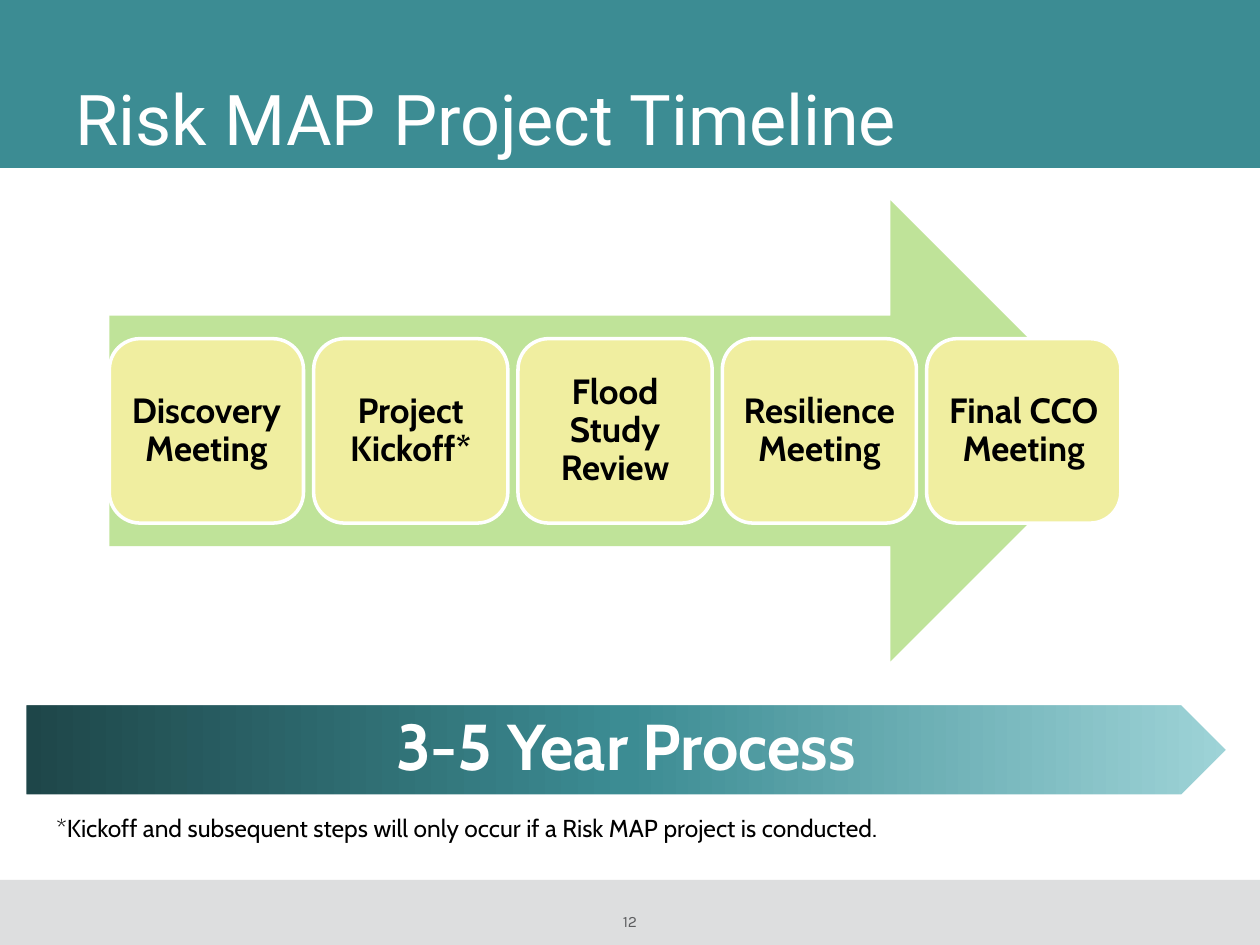
import copy

import lxml.etree
import pptx
import pptx.dml.color
import pptx.enum.shapes
import pptx.enum.text
import pptx.oxml.ns
import pptx.util

Pt = pptx.util.Pt
SHAPES = pptx.enum.shapes.MSO_SHAPE
ANCHOR = pptx.enum.text.MSO_ANCHOR
ALIGN = pptx.enum.text.PP_ALIGN

COLORS = {
    "teal": "3C8C93",
    "dark_teal": "1E4649",
    "light_teal": "9ED3D7",
    "footer": "DDDEDF",
    "number": "5B5C5E",
    "arrow": "92D050",
    "step": "F0EEA0",
    "white": "FFFFFF",
    "black": "000000",
}
STEPS = [
    "Discovery Meeting",
    "Project Kickoff*",
    "Flood Study Review",
    "Resilience Meeting",
    "Final CCO Meeting",
]


def rgb(name):
    return pptx.dml.color.RGBColor.from_string(COLORS[name])


def set_attributes(target, values):
    for name, value in values.items():
        setattr(target, name, value)


def write_text(shape, text, color, font, paragraph_format=None, insets=(7.2, 3.6, 7.2, 3.6),
               anchor=ANCHOR.TOP):
    left, top, right, bottom = map(Pt, insets)
    frame = shape.text_frame
    frame.text = text
    set_attributes(frame, {
        "word_wrap": True,
        "auto_size": pptx.enum.text.MSO_AUTO_SIZE.NONE,
        "vertical_anchor": anchor,
        "margin_left": left,
        "margin_top": top,
        "margin_right": right,
        "margin_bottom": bottom,
    })
    paragraph = frame.paragraphs[0]
    set_attributes(paragraph, {"alignment": ALIGN.LEFT, **(paragraph_format or {})})
    run = paragraph.runs[0]
    set_attributes(run.font, font)
    run.font.color.rgb = rgb(color)


def add_filled_shape(slide, kind, box, color, line=None):
    shape = slide.shapes.add_shape(kind, *map(Pt, box))
    shape.shadow.inherit = False
    shape.fill.solid()
    shape.fill.fore_color.rgb = rgb(color)
    if line:
        shape.line.color.rgb = rgb(line)
        shape.line.width = Pt(2)
    else:
        shape.line.fill.background()
    return shape


def add_footer(slide, box):
    left, top, width, height = box
    add_filled_shape(slide, SHAPES.RECTANGLE, box, "footer")
    number = slide.shapes.add_textbox(
        *map(Pt, (left + width / 2 - 60, top + 18, 120, 11)))
    write_text(number, "12", "number", {"name": "Karla", "size": Pt(9)},
               {"alignment": ALIGN.CENTER}, insets=(0, 0, 0, 0))


def add_header(slide, box):
    left, top, width, height = box
    add_filled_shape(slide, SHAPES.RECTANGLE, box, "teal")
    title = slide.shapes.title
    slide.shapes._spTree.append(title._element)
    set_attributes(title, {
        "left": Pt(left + 36),
        "top": Pt(top + 3.6),
        "width": Pt(width - 72),
        "height": Pt(height - 5.2),
    })
    write_text(title, "Risk MAP Project Timeline", "white",
               {"name": "Roboto", "size": Pt(40)}, {"line_spacing": 0.8},
               anchor=ANCHOR.BOTTOM)


def add_timeline(slide, box):
    left, top, width, height = box
    arrow = add_filled_shape(slide, SHAPES.RIGHT_ARROW, box, "arrow")
    color = arrow._element.spPr.find(".//" + pptx.oxml.ns.qn("a:srgbClr"))
    lxml.etree.SubElement(color, pptx.oxml.ns.qn("a:alpha"), val="58000")

    gap = 5.8
    step_width = (width - gap * (len(STEPS) - 1)) / len(STEPS)
    step_height = height * 0.4
    for index, text in enumerate(STEPS):
        step_box = (left + index * (step_width + gap), top + (height - step_height) / 2,
                    step_width, step_height)
        step = add_filled_shape(slide, SHAPES.ROUNDED_RECTANGLE, step_box, "step", "white")
        write_text(step, text, "black", {"name": "Cabin", "size": Pt(20), "bold": True},
                   {"alignment": ALIGN.CENTER, "line_spacing": 0.9},
                   insets=(6, 6, 6, 6), anchor=ANCHOR.MIDDLE)


def add_duration(slide, box):
    banner = add_filled_shape(slide, SHAPES.PENTAGON, box, "teal", "white")
    banner.fill.gradient()
    banner.fill.gradient_angle = 0
    first = banner.fill.gradient_stops[0]._gs
    first.addnext(copy.deepcopy(first))
    stops = zip(banner.fill.gradient_stops, (0, 0.5, 1), ("dark_teal", "teal", "light_teal"))
    for stop, position, color in stops:
        stop.position = position
        stop.color.rgb = rgb(color)
    write_text(banner, "3-5 Year Process", "white",
               {"name": "Cabin", "size": Pt(37), "bold": True},
               {"alignment": ALIGN.CENTER, "line_spacing": 0.9},
               insets=(16, 8, 3.6, 8), anchor=ANCHOR.MIDDLE)


def add_footnote(slide, box):
    note = slide.shapes.add_textbox(*map(Pt, box))
    write_text(note,
               "*Kickoff and subsequent steps will only occur if a Risk MAP project is conducted.",
               "black", {"name": "Cabin", "size": Pt(14)})


def main():
    presentation = pptx.Presentation()
    presentation.slide_width = Pt(720)
    presentation.slide_height = Pt(540)
    slide = presentation.slides.add_slide(presentation.slide_layouts[5])
    add_footer(slide, (0, 502.8, 720, 37.2))
    add_header(slide, (0, 0, 720, 96))
    add_timeline(slide, (62.5, 114.5, 578, 263.5))
    add_duration(slide, (14, 402, 688, 53))
    add_footnote(slide, (25.2, 460.8, 623, 24.5))
    presentation.save("out.pptx")


if __name__ == "__main__":
    main()
